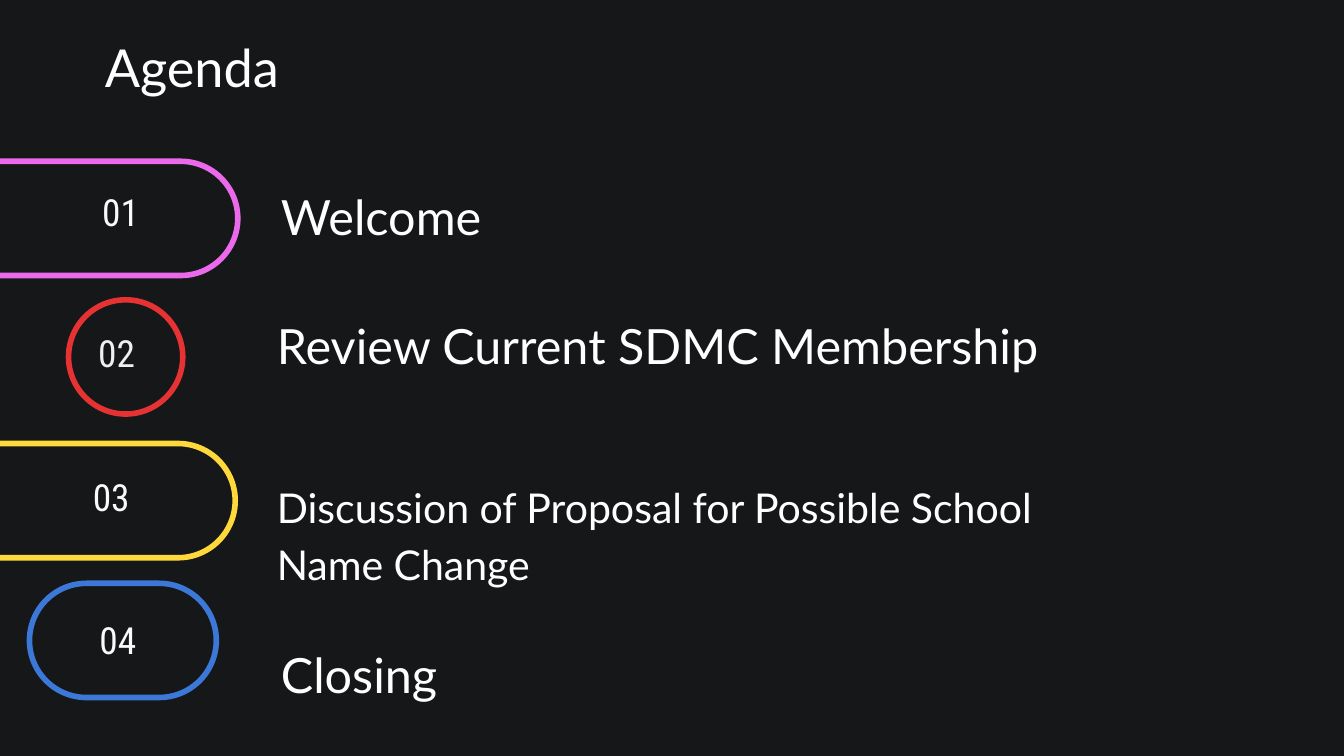
from dataclasses import dataclass

from pptx import Presentation
from pptx.dml.color import RGBColor
from pptx.enum.shapes import MSO_SHAPE
from pptx.enum.text import MSO_ANCHOR
from pptx.slide import Slide
from pptx.util import Pt


@dataclass(frozen=True)
class Theme:
    background: str = "161719"
    text: str = "FFFFFF"
    number: str = "FAFAFA"
    number_dim: str = "EFEFEF"
    pink: str = "EB6AEB"
    red: str = "E63232"
    yellow: str = "FFD93C"
    blue: str = "3C78D8"
    body_font: str = "Lato"
    number_font: str = "Roboto Condensed"
    title_size: float = 28
    topic_size: float = 26
    long_topic_size: float = 22
    number_size: float = 20
    outline: float = 3


THEME = Theme()


@dataclass(frozen=True)
class Box:
    """Left, top, width and height in points."""
    left: float
    top: float
    width: float
    height: float

    def lengths(self) -> tuple[Pt, Pt, Pt, Pt]:
        return Pt(self.left), Pt(self.top), Pt(self.width), Pt(self.height)


@dataclass(frozen=True)
class AgendaItem:
    number: str
    topic: str
    badge: Box
    badge_color: str
    number_box: Box
    topic_box: Box
    badge_shape: MSO_SHAPE = MSO_SHAPE.ROUNDED_RECTANGLE
    number_color: str = THEME.number
    topic_size: float = THEME.topic_size


ITEMS = [
    AgendaItem("01", "Welcome", Box(-34.6, 86.4, 162, 61.2), THEME.pink,
               Box(54.7, 83.5, 42.5, 59.8), Box(150.5, 93.6, 379.4, 39.6)),
    AgendaItem("02", "Review Current SDMC Membership", Box(36.7, 160.6, 61.2, 61.2), THEME.red,
               Box(52.6, 159.1, 42.5, 59.8), Box(148.3, 162.7, 501.1, 39.6),
               badge_shape=MSO_SHAPE.OVAL, number_color=THEME.number_dim),
    AgendaItem("03", "Discussion of Proposal for Possible School Name Change",
               Box(-36, 237.6, 162, 61.2), THEME.yellow,
               Box(49.7, 237.6, 39.6, 56.9), Box(148.3, 265, 461.5, 39.6),
               topic_size=THEME.long_topic_size),
    AgendaItem("04", "Closing", Box(15.8, 312.5, 100.1, 61.2), THEME.blue,
               Box(53.3, 312.5, 42.5, 59.8), Box(150.5, 339.2, 379.4, 39.6)),
]


def add_badge(slide: Slide, item: AgendaItem) -> None:
    badge = slide.shapes.add_shape(item.badge_shape, *item.badge.lengths())
    if item.badge_shape == MSO_SHAPE.ROUNDED_RECTANGLE:
        badge.adjustments[0] = 0.5
    badge.shadow.inherit = False
    badge.fill.background()
    badge.line.color.rgb = RGBColor.from_string(item.badge_color)
    badge.line.width = Pt(THEME.outline)


def add_text(slide: Slide, text: str, box: Box, font_name: str, size: float, color: str,
             anchor: MSO_ANCHOR = MSO_ANCHOR.MIDDLE, line_spacing: float = 1.0) -> None:
    frame = slide.shapes.add_textbox(*box.lengths()).text_frame
    frame.word_wrap = True
    frame.vertical_anchor = anchor
    frame.margin_left = frame.margin_top = frame.margin_right = frame.margin_bottom = Pt(0)
    paragraph = frame.paragraphs[0]
    paragraph.text = text
    paragraph.line_spacing = line_spacing
    paragraph.font.name = font_name
    paragraph.font.size = Pt(size)
    paragraph.font.color.rgb = RGBColor.from_string(color)


def main() -> None:
    presentation = Presentation()
    presentation.slide_width, presentation.slide_height = Pt(720), Pt(405)
    slide = presentation.slides.add_slide(presentation.slide_layouts[6])
    slide.background.fill.solid()
    slide.background.fill.fore_color.rgb = RGBColor.from_string(THEME.background)

    # Heading
    add_text(slide, "Agenda", Box(56.2, 18.7, 607, 37.4), THEME.body_font,
             THEME.title_size, THEME.text, anchor=MSO_ANCHOR.TOP)

    # Numbered badges with their topics
    for item in ITEMS:
        add_badge(slide, item)
        add_text(slide, item.number, item.number_box, THEME.number_font,
                 THEME.number_size, item.number_color)
        add_text(slide, item.topic, item.topic_box, THEME.body_font,
                 item.topic_size, THEME.text, line_spacing=1.15)

    presentation.save("out.pptx")


if __name__ == "__main__":
    main()
